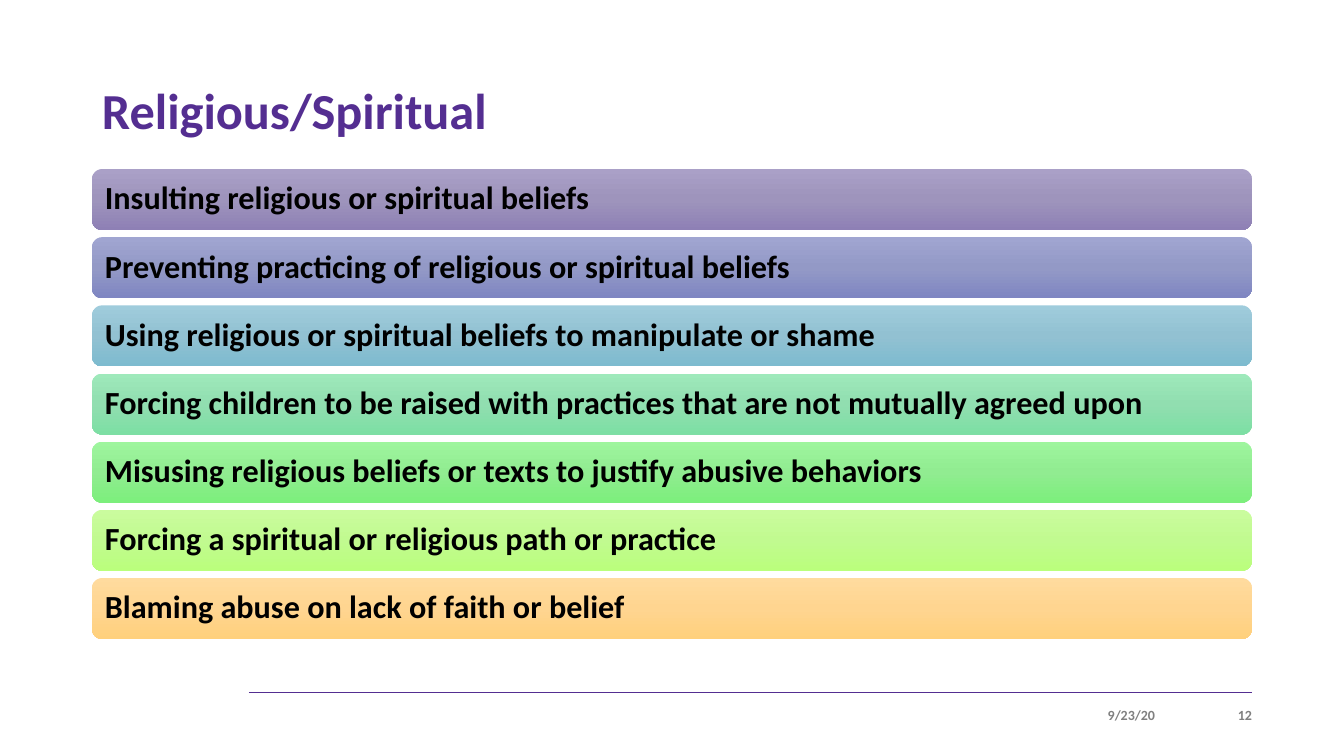
"""Build the Religious/Spiritual slide: a title, seven gradient bars and a footer."""
from copy import deepcopy

from lxml.etree import SubElement
from pptx import Presentation
from pptx.dml.color import RGBColor
from pptx.enum.shapes import MSO_CONNECTOR, MSO_SHAPE
from pptx.enum.text import MSO_ANCHOR, PP_ALIGN
from pptx.oxml.ns import qn
from pptx.util import Pt

TITLE = "Religious/Spiritual"
BARS = [
    ("Insulting religious or spiritual beliefs", ("AAA0C7", "9E94BC", "8E80B5")),
    ("Preventing practicing of religious or spiritual beliefs", ("A0A5D1", "9399C6", "7F86C2")),
    ("Using religious or spiritual beliefs to manipulate or shame", ("9FCCDC", "92C1D2", "7DBBCF")),
    ("Forcing children to be raised with practices that are not mutually agreed upon",
     ("9EE9BB", "91DEB0", "7DDFA4")),
    ("Misusing religious beliefs or texts to justify abusive behaviors", ("9EF59E", "91EC91", "7CEF7C")),
    ("Forcing a spiritual or religious path or practice", ("CAFC9E", "C1FA90", "BAFF7C")),
    ("Blaming abuse on lack of faith or belief", ("FFDB9E", "FFD590", "FFD07C")),
]
FOOTER = [("9/23/20", 853, 302), ("12", 1171, 81)]
COLORS = {"purple": "542E91", "gray": "808080", "black": "000000"}
FONT = "Calibri"

SLIDE_W, SLIDE_H = 1344, 756
LEFT, RIGHT = 92, 1252
BARS_TOP, BARS_BOTTOM, BAR_H = 169, 639, 61
PITCH = (BARS_BOTTOM - BARS_TOP - BAR_H) / (len(BARS) - 1)
RULE_LEFT, RULE_Y = 249, 692
FOOTER_TOP, FOOTER_H = 701, 28


def px(n):
    return round(n * 914400 / 100.8)


def box(x, y, w, h):
    return px(x), px(y), px(w), px(h)


def write(sp, text, size, color, align=PP_ALIGN.LEFT, inset=(10, 5), spacing=None):
    tf = sp.text_frame
    tf.word_wrap = True
    tf.vertical_anchor = MSO_ANCHOR.MIDDLE
    tf.margin_left = tf.margin_right = px(inset[0])
    tf.margin_top = tf.margin_bottom = px(inset[1])
    p = tf.paragraphs[0]
    p.alignment = align
    p.line_spacing = spacing
    r = p.add_run()
    r.text = text
    r.font.name = FONT
    r.font.size = Pt(size)
    r.font.bold = True
    r.font.color.rgb = RGBColor.from_string(COLORS[color])


def fill_gradient(sp, hexes):
    fill = sp.fill
    fill.gradient()
    fill.gradient_angle = 270
    first = next(sp._element.iter(qn("a:gs")))
    first.addnext(deepcopy(first))
    for i, (stop, color) in enumerate(zip(fill.gradient_stops, hexes)):
        stop.position = i / (len(hexes) - 1)
        stop.color.rgb = RGBColor.from_string(color)


def main():
    prs = Presentation()
    prs.slide_width, prs.slide_height = px(SLIDE_W), px(SLIDE_H)
    s = prs.slides.add_slide(prs.slide_layouts[5])

    rule = s.shapes.add_connector(
        MSO_CONNECTOR.STRAIGHT, px(RULE_LEFT), px(RULE_Y), px(RIGHT), px(RULE_Y))
    rule.line.color.rgb = RGBColor.from_string(COLORS["purple"])
    rule.line.width = Pt(0.5)
    SubElement(rule._element.spPr, qn("a:effectLst"))

    title = s.shapes.title
    title.left, title.top, title.width, title.height = box(LEFT, 40, RIGHT - LEFT, 146)
    write(title, TITLE, 36, "purple", spacing=0.9)

    for text, x, w in FOOTER:
        sp = s.shapes.add_textbox(*box(x, FOOTER_TOP, w, FOOTER_H))
        write(sp, text, 10, "gray", PP_ALIGN.RIGHT, inset=(0, 5))

    for i, (text, hexes) in enumerate(BARS):
        sp = s.shapes.add_shape(
            MSO_SHAPE.ROUNDED_RECTANGLE, *box(LEFT, BARS_TOP + i * PITCH, RIGHT - LEFT, BAR_H))
        sp.shadow.inherit = False
        sp.line.fill.background()
        fill_gradient(sp, hexes)
        write(sp, text, 23, "black", inset=(10, 10), spacing=0.9)

    prs.save("out.pptx")


if __name__ == "__main__":
    main()
